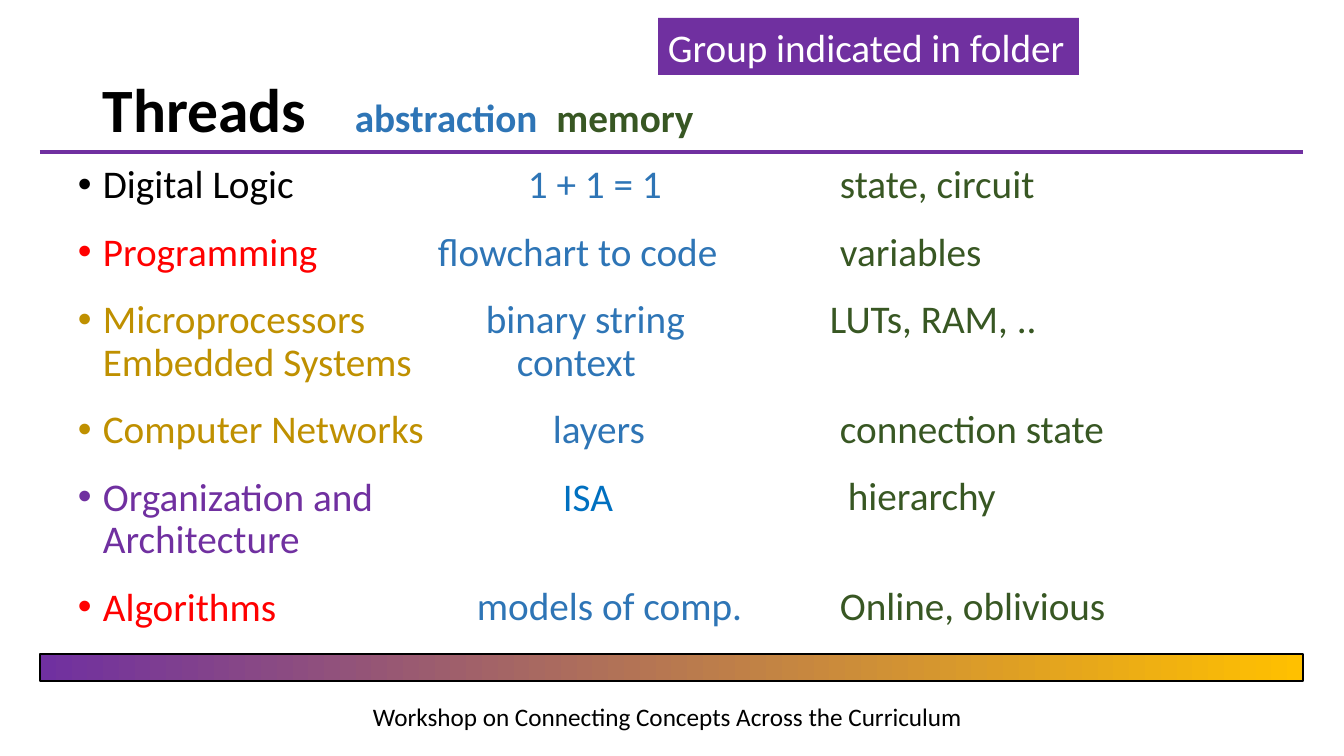
from lxml import etree
from pptx import Presentation
from pptx.dml.color import RGBColor
from pptx.enum.shapes import MSO_CONNECTOR, MSO_SHAPE
from pptx.enum.text import MSO_ANCHOR
from pptx.oxml.ns import qn
from pptx.util import Emu, Pt

BLACK, RED, OCHRE, PURPLE = "000000", "FF0000", "BF9000", "7030A0"
BLUE, DEEP_BLUE, GREEN, WHITE, GOLD = "2E75B6", "0070C0", "385723", "FFFFFF", "FFC000"
PX_PER_INCH = 100.8
LABEL_INDENT, HANGING = 76, 25
ROW_GAP, LINE_HEIGHT = 18, 30  # points


def px(n):
    return Emu(round(n * 914400 / PX_PER_INCH))


def add_text(p, text, size=28, color=BLACK, bold=False, before=0, spacing=0.9,
             indent=0, bullet=False, tabs=()):
    """Add a run to p and set the paragraph's spacing, indent, bullet and tab stops."""
    r = p.add_run()
    r.text = text
    r.font.name, r.font.size, r.font.bold = "Calibri", Pt(size), bold
    r.font.color.rgb = RGBColor.from_string(color)
    p.space_before, p.line_spacing = Pt(before), spacing
    pPr = p._p.get_or_add_pPr()
    pPr.set("marL", str(px(indent)))
    pPr.set("indent", str(px(-HANGING if bullet else 0)))
    if bullet:
        etree.SubElement(pPr, qn("a:buFont"), typeface="Arial")
        etree.SubElement(pPr, qn("a:buChar"), char="•")
    if tabs:
        tab_list = etree.SubElement(pPr, qn("a:tabLst"))
        for stop in tabs:
            etree.SubElement(tab_list, qn("a:tab"), pos=str(px(stop)), algn="l")


prs = Presentation()
prs.slide_width, prs.slide_height = px(1344), px(756)
s = prs.slides.add_slide(prs.slide_layouts[6])

# Heading line
tf = s.shapes.add_textbox(px(93), px(40), px(1210), px(146)).text_frame
tf.word_wrap, tf.vertical_anchor = True, MSO_ANCHOR.MIDDLE
p = tf.paragraphs[0]
add_text(p, "Threads", size=44, bold=True, tabs=(402, 775))
add_text(p, "\tabstraction", color=BLUE, bold=True)
add_text(p, "\tmemory", color=GREEN, bold=True)

# Each line: starts a row, then (text, colour, indent) per column
lines = [
    (True, ("Digital Logic", BLACK, LABEL_INDENT), ("1 + 1 = 1", BLUE, 108),
     ("state, circuit", GREEN, 10)),
    (True, ("Programming", RED, LABEL_INDENT), ("flowchart to code", BLUE, 18),
     ("variables", GREEN, 10)),
    (True, ("Microprocessors", OCHRE, LABEL_INDENT), ("binary string", BLUE, 66),
     ("LUTs, RAM, ..", GREEN, 0)),
    (False, ("Embedded Systems", OCHRE, LABEL_INDENT), ("context", BLUE, 97), None),
    (True, ("Computer Networks", OCHRE, LABEL_INDENT), ("layers", BLUE, 133),
     ("connection state", GREEN, 10)),
    (True, ("Organization and", PURPLE, LABEL_INDENT), ("ISA", DEEP_BLUE, 143),
     ("hierarchy", GREEN, 18)),
    (False, ("Architecture", PURPLE, LABEL_INDENT), None, None),
    (True, ("Algorithms", RED, LABEL_INDENT), ("models of comp.", BLUE, 57),
     ("Online, oblivious", GREEN, 10)),
]
for column, (left, width) in enumerate([(17, 420), (410, 400), (820, 480)]):
    tf = s.shapes.add_textbox(px(left), px(160), px(width), px(507)).text_frame
    tf.word_wrap = True
    p, before = tf.paragraphs[0], 0
    for i, (starts_row, *cells) in enumerate(lines):
        if starts_row and i:
            before += ROW_GAP
        if cells[column] is None:
            before += LINE_HEIGHT
            continue
        text, color, indent = cells[column]
        if i:
            p = tf.add_paragraph()
        add_text(p, text, color=color, before=before, indent=indent,
                 bullet=starts_row and column == 0)
        before = 0

# Gradient bar
bar = s.shapes.add_shape(MSO_SHAPE.RECTANGLE, px(40), px(654), px(1263), px(27))
bar.shadow.inherit = False
bar.fill.gradient()
bar.fill.gradient_angle = 0
for stop, color in zip(bar.fill.gradient_stops, (PURPLE, GOLD)):
    stop.color.rgb = RGBColor.from_string(color)
bar.line.color.rgb = RGBColor.from_string(BLACK)
bar.line.width = Pt(1)

# Rule under the heading
rule = s.shapes.add_connector(MSO_CONNECTOR.STRAIGHT, px(40), px(152), px(1303), px(152))
rule.line.color.rgb = RGBColor.from_string(PURPLE)
rule.line.width = Pt(2.5)
etree.SubElement(rule._element.spPr, qn("a:effectLst"))

# Group label and footer
label = s.shapes.add_textbox(px(658), px(18), px(421), px(57))
label.fill.solid()
label.fill.fore_color.rgb = RGBColor.from_string(PURPLE)
footer = s.shapes.add_textbox(px(363), px(696), px(618), px(40))
for sp, text, size, color in [
    (label, "Group indicated in folder", 28, WHITE),
    (footer, "Workshop on Connecting Concepts Across the Curriculum", 18, BLACK),
]:
    sp.text_frame.word_wrap = False
    add_text(sp.text_frame.paragraphs[0], text, size=size, color=color, spacing=1.0)

prs.save("out.pptx")
